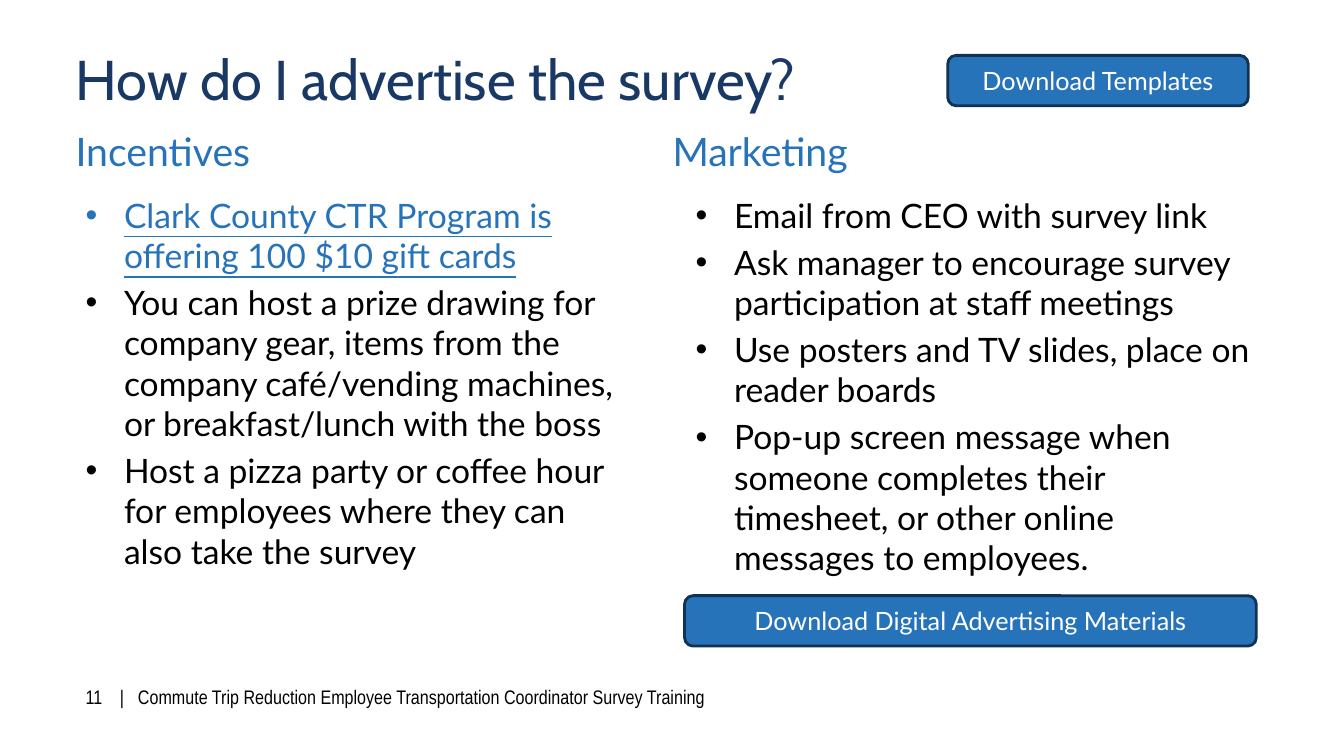
from pptx import Presentation
from pptx import util as u
from pptx.dml.color import RGBColor
from pptx.enum import shapes, text
from pptx.oxml.ns import qn
from lxml import etree

NAVY = RGBColor(0x19, 0x39, 0x64)
BLUE = RGBColor(0x27, 0x73, 0xBA)
EDGE = RGBColor(0x11, 0x32, 0x52)
BLACK = RGBColor(0, 0, 0)
WHITE = RGBColor(0xFF, 0xFF, 0xFF)

INDENT = u.Inches(0.38)


class SlideBuilder:
    """Holds the text style and the page being filled."""

    body_font = "Lato"

    def __init__(self, page):
        self.page = page

    def place(self, box, left, top, width, height):
        box.left, box.top = u.Inches(left), u.Inches(top)
        box.width, box.height = u.Inches(width), u.Inches(height)

    def frame(self, box, inset=True, anchor=text.MSO_ANCHOR.TOP):
        frame = box.text_frame
        frame.word_wrap = True
        frame.auto_size = text.MSO_AUTO_SIZE.NONE
        frame.vertical_anchor = anchor
        side, edge = (0.1, 0.05) if inset else (0, 0)
        frame.margin_left = frame.margin_right = u.Inches(side)
        frame.margin_top = frame.margin_bottom = u.Inches(edge)
        return frame

    def add_words(self, para, words, size, color, font=body_font,
                  align=text.PP_ALIGN.LEFT, underline=False):
        para.alignment = align
        para.line_spacing = 1.0
        span = para.add_run()
        span.text = words
        span.font.name = font
        span.font.size = u.Pt(size)
        span.font.color.rgb = color
        span.font.bold = False
        span.font.underline = underline

    def heading(self, index, words, area, size=28, color=BLUE, font=body_font):
        box = self.page.placeholders[index]
        self.place(box, *area)
        para = self.frame(box, inset=False).paragraphs[0]
        para.space_before = u.Pt(0)
        self.add_words(para, words, size, color, font)

    def bullets(self, index, items, area):
        box = self.page.placeholders[index]
        self.place(box, *area)
        frame = self.frame(box)
        for number, (words, color, underline) in enumerate(items):
            para = frame.add_paragraph() if number else frame.paragraphs[0]
            props = para._p.get_or_add_pPr()
            props.set("marL", str(INDENT))
            props.set("indent", str(-INDENT))
            etree.SubElement(props, qn("a:buFont")).set("typeface", "Arial")
            etree.SubElement(props, qn("a:buChar")).set("char", "•")
            para.space_before = u.Pt(4.8 if number else 0)
            self.add_words(para, words, 24, color, underline=underline)

    def button(self, words, area):
        box = self.page.shapes.add_shape(
            shapes.MSO_SHAPE.ROUNDED_RECTANGLE, *map(u.Inches, area))
        box.shadow.inherit = False
        box.fill.solid()
        box.fill.fore_color.rgb = BLUE
        box.line.color.rgb = EDGE
        box.line.width = u.Pt(2)
        frame = self.frame(box, anchor=text.MSO_ANCHOR.MIDDLE)
        self.add_words(frame.paragraphs[0], words, 18, WHITE,
                       align=text.PP_ALIGN.CENTER)

    def footer(self, parts, stops, area):
        box = self.page.shapes.add_textbox(*map(u.Inches, area))
        para = self.frame(box).paragraphs[0]
        tabs = etree.SubElement(para._p.get_or_add_pPr(), qn("a:tabLst"))
        for stop in stops:
            tab = etree.SubElement(tabs, qn("a:tab"))
            tab.set("pos", str(u.Inches(stop)))
            tab.set("algn", "l")
        self.add_words(para, "\t".join(parts), 14, BLACK, "Arial Narrow")


def main():
    deck = Presentation()
    deck.slide_width, deck.slide_height = u.Inches(13.33), u.Inches(7.5)
    comparison = deck.slide_layouts[4]
    slide = SlideBuilder(deck.slides.add_slide(comparison))

    # Title
    slide.heading(0, "How do I advertise the survey?",
                  (0.75, 0.44, 11.83, 0.73), 40, NAVY, "Cabin")

    # Incentives column
    slide.heading(1, "Incentives", (0.75, 1.26, 5.92, 0.47))
    slide.bullets(2, [
        ("Clark County CTR Program is offering 100 $10 gift cards", BLUE, True),
        ("You can host a prize drawing for company gear, items from the "
         "company café/vending machines, or breakfast/lunch with the boss",
         BLACK, False),
        ("Host a pizza party or coffee hour for employees where they can "
         "also take the survey", BLACK, False),
    ], (0.75, 1.88, 5.58, 3.7))

    # Marketing column
    slide.heading(3, "Marketing", (6.67, 1.26, 5.92, 0.47))
    ideas = [
        "Email from CEO with survey link",
        "Ask manager to encourage survey participation at staff meetings",
        "Use posters and TV slides, place on reader boards",
        "Pop-up screen message when someone completes their timesheet, "
        "or other online messages to employees.",
    ]
    slide.bullets(4, [(idea, BLACK, False) for idea in ideas],
                  (6.8, 1.88, 5.77, 3.7))

    # Download buttons
    slide.button("Download Templates", (9.4, 0.55, 2.98, 0.5))
    slide.button("Download Digital Advertising Materials",
                 (6.79, 5.91, 5.67, 0.5))

    # Footer
    slide.footer(["11", "|", "Commute Trip Reduction Employee Transportation "
                  "Coordinator Survey Training"],
                 (0.34, 0.52), (0.75, 6.75, 11.49, 0.37))

    deck.save("out.pptx")


if __name__ == "__main__":
    main()
